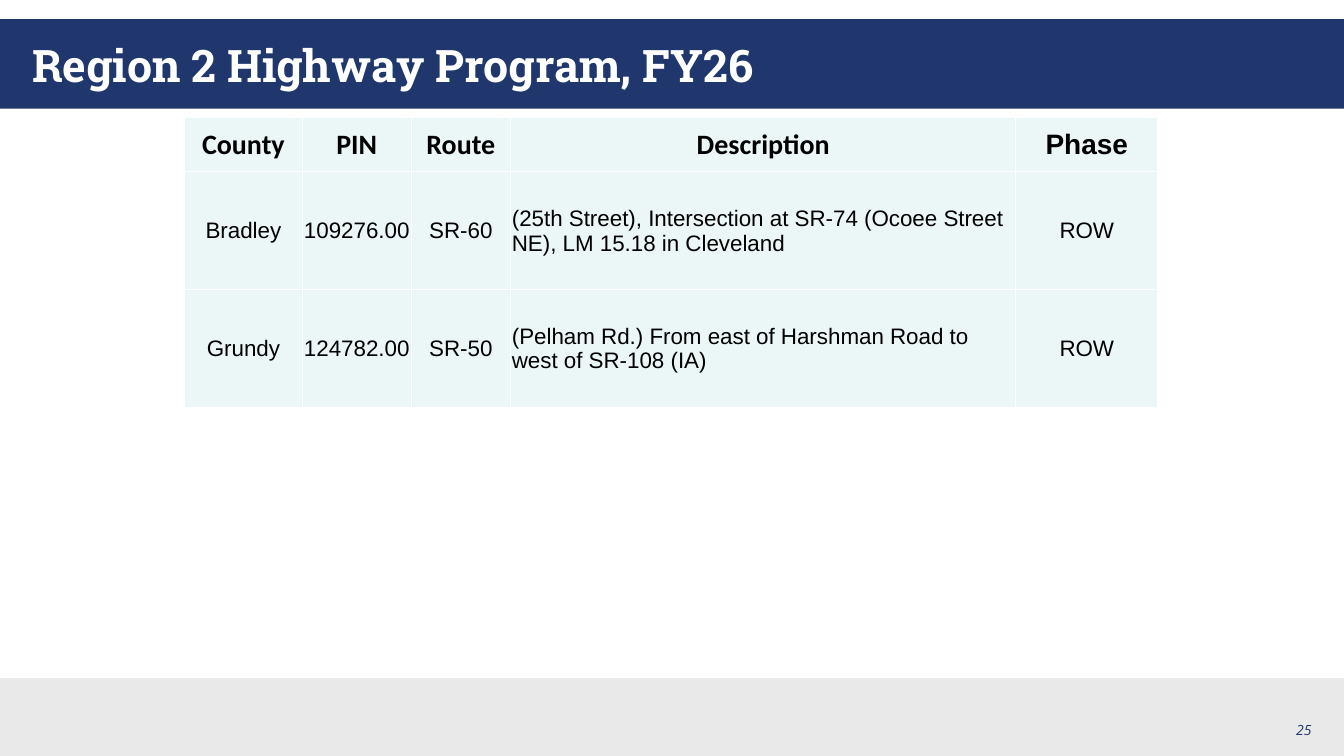
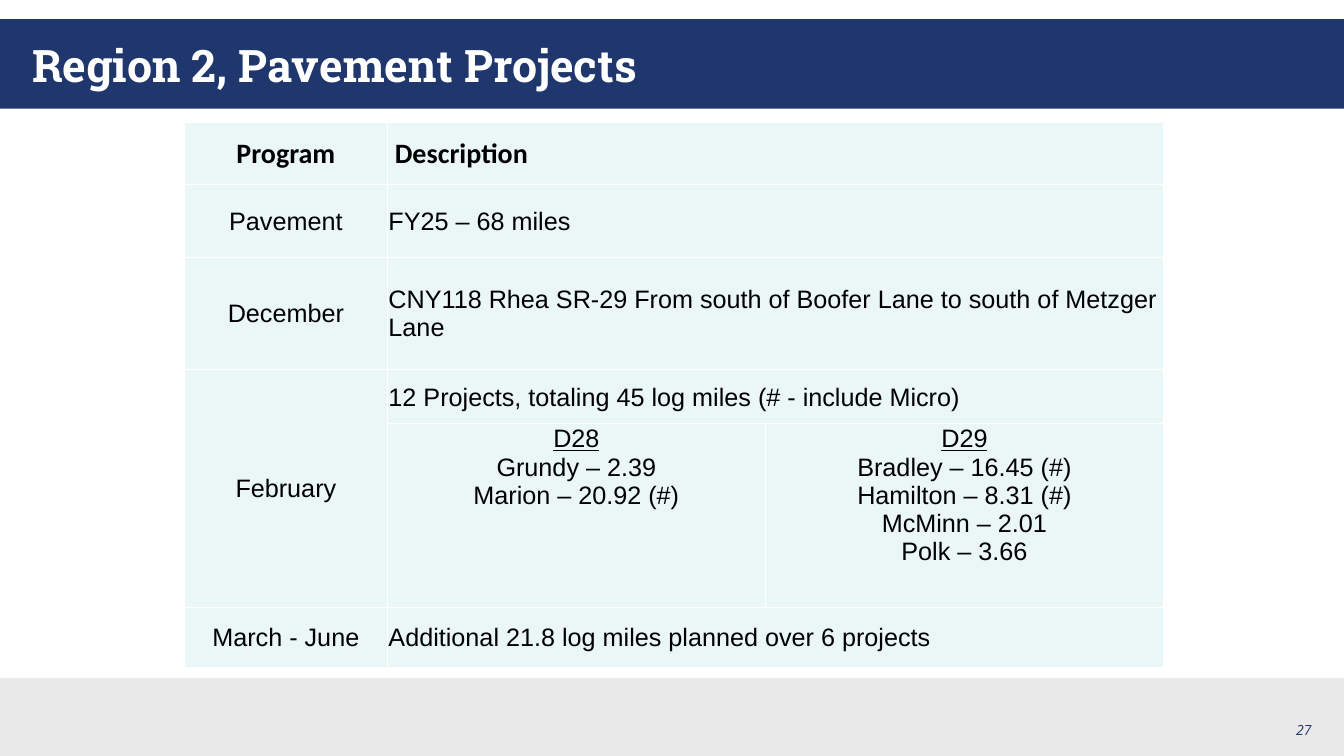
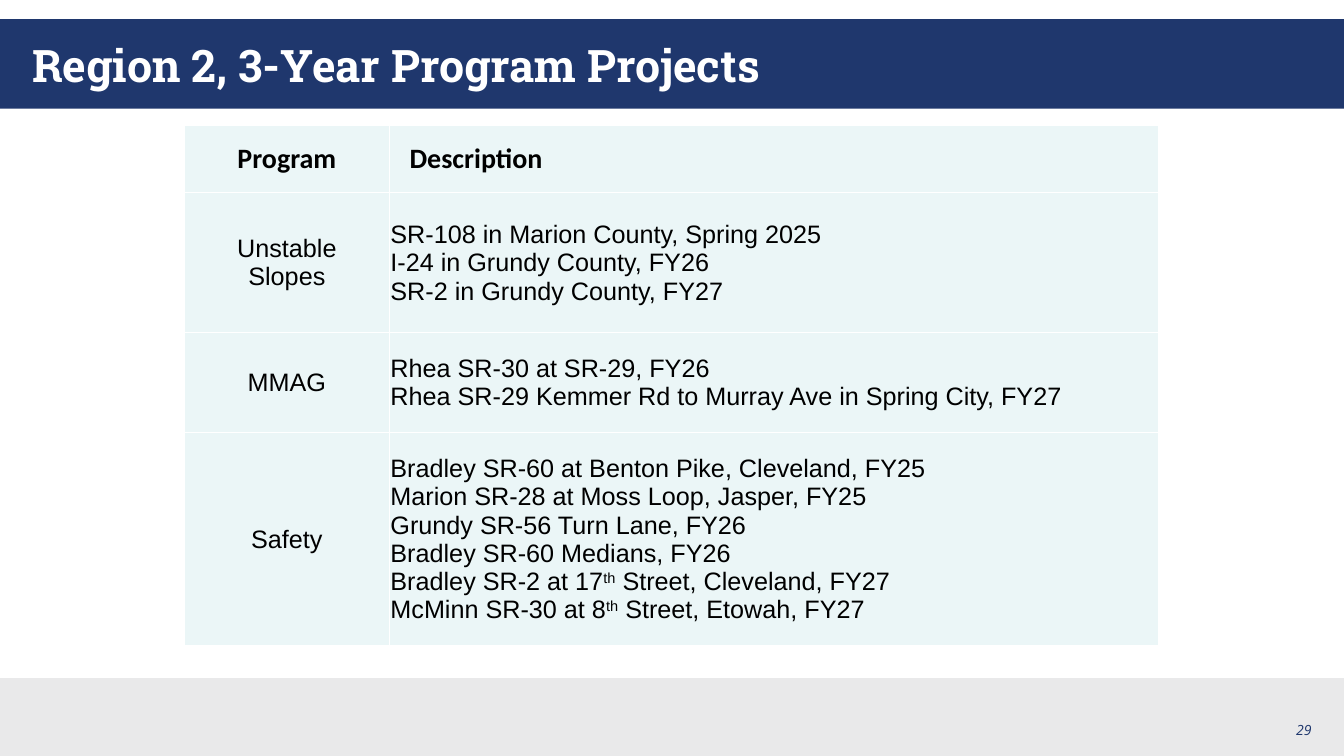
from dataclasses import dataclass, field

from lxml import etree
from pptx import Presentation
from pptx import util as u
from pptx.dml.color import RGBColor
from pptx.enum import shapes, text
from pptx.oxml.ns import qn


@dataclass(frozen=True)
class Theme:
    navy: str = "1F376D"
    grey: str = "E9E9EA"
    pale: str = "EBF6F7"
    white: str = "FFFFFF"
    black: str = "000000"
    title_font: str = "Roboto Slab"
    number_font: str = "Open Sans"
    header_font: str = "Calibri"
    body_font: str = "Arial"
    title_size: int = 32
    header_size: int = 20
    body_size: int = 18
    small_body_size: int = 16
    number_size: int = 10


THEME = Theme()
PAGE_WIDTH, PAGE_HEIGHT = 33.87, 19.05
TABLE_LEFT = 4.65
CELL_INSET = 0.03
LEFT, CENTER, RIGHT = text.PP_ALIGN.LEFT, text.PP_ALIGN.CENTER, text.PP_ALIGN.RIGHT
TOP, MIDDLE, BOTTOM = text.MSO_ANCHOR.TOP, text.MSO_ANCHOR.MIDDLE, text.MSO_ANCHOR.BOTTOM


@dataclass
class Cell:
    """Table cell content; across and down count the grid cells it covers."""
    content: str
    across: int = 1
    down: int = 1
    anchor: text.MSO_ANCHOR = MIDDLE
    indent: float = 0
    style: dict = field(default_factory=dict)


def write(frame, content, *, font=THEME.body_font, size=THEME.body_size,
          color=THEME.black, bold=False, italic=False, align=LEFT,
          underline_first=False):
    """Write one paragraph per line; text between ^ marks is superscript."""
    for row, line in enumerate(content.split("\n")):
        para = frame.add_paragraph() if row else frame.paragraphs[0]
        para.alignment = align
        for index, piece in enumerate(line.split("^")):
            span = para.add_run()
            span.text = piece
            span.font.name = font
            span.font.size = u.Pt(size)
            span.font.bold = bold
            span.font.italic = italic
            span.font.underline = underline_first and row == 0
            span.font.color.rgb = RGBColor.from_string(color)
            if index % 2:
                span.font._element.set("baseline", "30000")


def add_band(page, top, height, color):
    band = page.shapes.add_shape(shapes.MSO_SHAPE.RECTANGLE, 0, u.Cm(top),
                                 u.Cm(PAGE_WIDTH), u.Cm(height))
    band.shadow.inherit = False
    band.fill.solid()
    band.fill.fore_color.rgb = RGBColor.from_string(color)
    band.line.fill.background()


def add_text(page, left, top, width, height, content, anchor, **style):
    box = page.shapes.add_textbox(u.Cm(left), u.Cm(top), u.Cm(width), u.Cm(height))
    frame = box.text_frame
    frame.word_wrap = True
    frame.vertical_anchor = anchor
    write(frame, content, **style)


def add_page(deck, title, number):
    """Add a slide with the shared bands, title and page number."""
    page = deck.slides.add_slide(deck.slide_layouts[6])
    add_band(page, 0.48, 2.26, THEME.navy)
    add_band(page, 17.09, PAGE_HEIGHT - 17.09, THEME.grey)
    add_text(page, 0.56, 0.48, 32.74, 2.29, title, MIDDLE, font=THEME.title_font,
             size=THEME.title_size, color=THEME.white, bold=True)
    add_text(page, 25.4, 17.7, 7.9, 1.02, str(number), BOTTOM, font=THEME.number_font,
             size=THEME.number_size, color=THEME.navy, italic=True, align=RIGHT)
    return page


def paint_cell(cell):
    """Fill the cell and draw its four borders."""
    cell.fill.solid()
    cell.fill.fore_color.rgb = RGBColor.from_string(THEME.pale)
    properties = cell._tc.get_or_add_tcPr()
    for index, side in enumerate(("lnL", "lnR", "lnT", "lnB")):
        border = etree.Element(qn(f"a:{side}"), w=str(u.Pt(1)))
        fill = etree.SubElement(border, qn("a:solidFill"))
        etree.SubElement(fill, qn("a:srgbClr"), val=THEME.white)
        properties.insert(index, border)


def fill_cell(cell, entry):
    cell.margin_left = u.Cm(CELL_INSET + entry.indent)
    cell.margin_right = cell.margin_top = u.Cm(CELL_INSET)
    cell.margin_bottom = 0
    cell.vertical_anchor = entry.anchor
    write(cell.text_frame, entry.content, **entry.style)


def add_grid(page, top, widths, heights, entries):
    """Add a table; None in entries marks a cell covered by a merged one."""
    grid = page.shapes.add_table(len(heights), len(widths), u.Cm(TABLE_LEFT), u.Cm(top),
                                 u.Cm(sum(widths)), u.Cm(sum(heights))).table
    grid.first_row = grid.horz_banding = False
    for column, width in zip(grid.columns, widths):
        column.width = u.Cm(width)
    for row, height in zip(grid.rows, heights):
        row.height = u.Cm(height)
    for r, line in enumerate(entries):
        for c, entry in enumerate(line):
            cell = grid.cell(r, c)
            paint_cell(cell)
            if entry is None:
                continue
            if entry.across > 1 or entry.down > 1:
                cell.merge(grid.cell(r + entry.down - 1, c + entry.across - 1))
            fill_cell(cell, entry)


def header(content, align=CENTER, font=THEME.header_font, **layout):
    style = dict(font=font, size=THEME.header_size, bold=True, align=align)
    return Cell(content, style=style, **layout)


def body(content, align=LEFT, size=THEME.body_size, **layout):
    return Cell(content, style=dict(align=align, size=size), **layout)


def label(content, **options):
    return body(content, align=CENTER, **options)


def county_list(content):
    style = dict(align=CENTER, underline_first=True)
    return Cell(content, anchor=TOP, style=style)


def add_highway_page(deck):
    page = add_page(deck, "Region 2 Highway Program, FY26", 25)
    projects = [
        ("Bradley", "109276.00", "SR-60",
         "(25th Street), Intersection at SR-74 (Ocoee Street NE), LM 15.18 in Cleveland",
         "ROW"),
        ("Grundy", "124782.00", "SR-50",
         "(Pelham Rd.) From east of Harshman Road to west of SR-108 (IA)", "ROW"),
    ]
    entries = [[header(name) for name in ("County", "PIN", "Route", "Description")]
               + [header("Phase", font=THEME.body_font)]]
    for project in projects:
        entries.append([body(value, align=LEFT if column == 3 else CENTER,
                             size=THEME.small_body_size)
                        for column, value in enumerate(project)])
    add_grid(page, 2.95, [2.97, 2.74, 2.51, 12.73, 3.58], [1.37, 2.97, 2.97], entries)


def add_pavement_page(deck):
    page = add_page(deck, "Region 2, Pavement Projects", 27)
    entries = [
        [header("Program"), header("Description", align=LEFT, across=2, indent=0.16), None],
        [label("Pavement"), body("FY25 – 68 miles", across=2), None],
        [label("December"),
         body("CNY118 Rhea SR-29 From south of Boofer Lane to south of Metzger Lane",
              across=2), None],
        [label("February", down=2),
         body("12 Projects, totaling 45 log miles (# - include Micro)", across=2), None],
        [None,
         county_list("D28\nGrundy – 2.39\nMarion – 20.92 (#)"),
         county_list("D29\nBradley – 16.45 (#)\nHamilton – 8.31 (#)\n"
                     "McMinn – 2.01\nPolk – 3.66")],
        [label("March - June"),
         body("Additional 21.8 log miles planned over 6 projects", across=2), None],
    ]
    add_grid(page, 3.09, [5.11, 9.53, 10.03], [1.55, 1.85, 2.82, 1.37, 4.62, 1.52], entries)


def add_three_year_page(deck):
    page = add_page(deck, "Region 2, 3-Year Program Projects", 29)
    entries = [
        [header("Program"), header("Description", align=LEFT, indent=0.48)],
        [label("Unstable\nSlopes"),
         body("SR-108 in Marion County, Spring 2025\n"
              "I-24 in Grundy County, FY26\n"
              "SR-2 in Grundy County, FY27")],
        [label("MMAG"),
         body("Rhea SR-30 at SR-29, FY26\n"
              "Rhea SR-29 Kemmer Rd to Murray Ave in Spring City, FY27")],
        [label("Safety"),
         body("Bradley SR-60 at Benton Pike, Cleveland, FY25\n"
              "Marion SR-28 at Moss Loop, Jasper, FY25\n"
              "Grundy SR-56 Turn Lane, FY26\n"
              "Bradley SR-60 Medians, FY26\n"
              "Bradley SR-2 at 17^th^ Street, Cleveland, FY27\n"
              "McMinn SR-30 at 8^th^ Street, Etowah, FY27")],
    ]
    add_grid(page, 3.15, [5.16, 19.38], [1.7, 3.53, 2.51, 5.38], entries)


def main():
    deck = Presentation()
    deck.slide_width, deck.slide_height = u.Cm(PAGE_WIDTH), u.Cm(PAGE_HEIGHT)
    add_highway_page(deck)
    add_pavement_page(deck)
    add_three_year_page(deck)
    deck.save("out.pptx")


if __name__ == "__main__":
    main()
